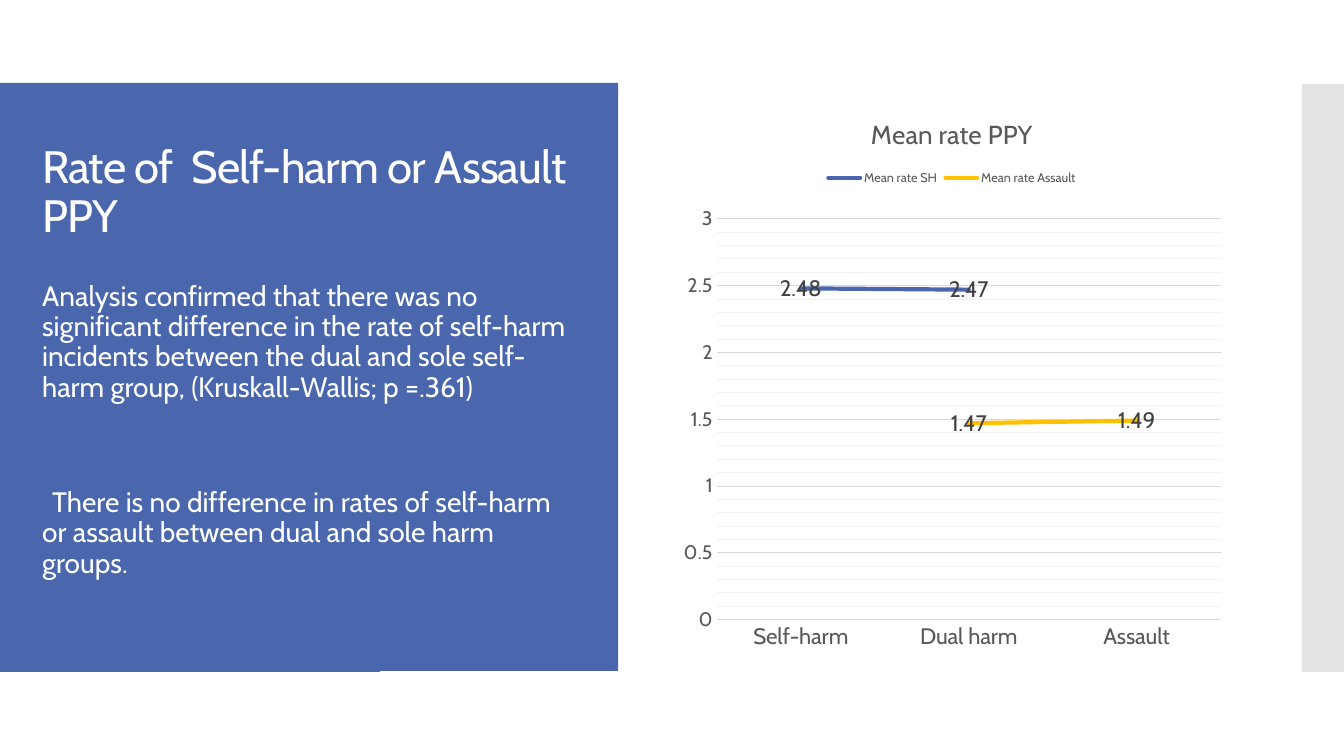
"""Build a slide on self-harm and assault rates with a line chart."""
from copy import deepcopy
from lxml.etree import SubElement
from pptx import Presentation
from pptx.chart.data import CategoryChartData as Data
from pptx.dml.color import RGBColor
from pptx.enum.chart import XL_CHART_TYPE as Kind, XL_LABEL_POSITION as Spot
from pptx.enum.chart import XL_LEGEND_POSITION as Side, XL_TICK_MARK as Tick
from pptx.enum.shapes import MSO_SHAPE as Form
from pptx.enum.text import MSO_ANCHOR as Anchor
from pptx.oxml.ns import qn
from pptx.util import Pt

BLUE = RGBColor(0x4A, 0x66, 0xAC)
GOLD = RGBColor(0xFF, 0xC0, 0x00)
WHITE = RGBColor(0xFF, 0xFF, 0xFF)
PALE = RGBColor(0xE3, 0xE3, 0xE3)
GRID = RGBColor(0xD9, 0xD9, 0xD9)
FINE = RGBColor(0xF2, 0xF2, 0xF2)
GREY = RGBColor(0x59, 0x59, 0x59)
DARK = RGBColor(0x40, 0x40, 0x40)
FONT = "Cabin"

TITLE = "Rate of  Self-harm or Assault PPY"
NOTES = [
    ("Analysis confirmed that there was no significant difference in the rate of "
     "self-harm incidents between the dual and sole self-harm group, "
     "(Kruskall-Wallis; p =.361)", 0, 0),
    ("There is no difference in rates of self-harm or assault between dual and "
     "sole harm groups.", 55, 7.2),
]
GROUPS = ["Self-harm", "Dual harm", "Assault"]
RATES = [
    ("Mean rate SH", (2.48, 2.47, None), BLUE),
    ("Mean rate Assault", (None, 1.47, 1.49), GOLD),
]
PANELS = [
    ((0, 60, 271.5, 420), BLUE),
    ((930, 60, 30, 420), PALE),
    ((0, 59.2, 441.5, 420), BLUE),
]
HEAD = (23, 88.5, 394, 98.5)
BODY = (23, 198, 394, 258)
CHART = (480, 67.7, 400, 403.2)
PLOT = {"x": 0.08, "y": 0.22, "w": 0.9, "h": 0.71}


def place(box):
    return [Pt(n) for n in box]


def style(font, size, color):
    for key, val in {"name": FONT, "size": Pt(size), "bold": False}.items():
        setattr(font, key, val)
    font.color.rgb = color


def rule(line, color, width):
    line.color.rgb = color
    line.width = Pt(width)


def add_text(slide, box, notes, size, anchor):
    frame = slide.shapes.add_textbox(*place(box)).text_frame
    frame.word_wrap = True
    frame.vertical_anchor = anchor
    for i, (text, gap, indent) in enumerate(notes):
        para = frame.add_paragraph() if i else frame.paragraphs[0]
        look = {"line_spacing": 0.9, "space_before": Pt(gap), "space_after": Pt(6)}
        for key, val in look.items():
            setattr(para, key, val)
        para._p.get_or_add_pPr().set("indent", str(int(Pt(indent))))
        run = para.add_run()
        run.text = text
        style(run.font, size, WHITE)
    return frame


def add_rates(slide):
    data = Data()
    data.categories = GROUPS
    for name, vals, _ in RATES:
        data.add_series(name, vals)
    chart = slide.shapes.add_chart(Kind.LINE, *place(CHART), data).chart
    style(chart.font, 10, GREY)
    chart.has_title = True
    frame = chart.chart_title.text_frame
    frame.text = "Mean rate PPY"
    style(frame.paragraphs[0].runs[0].font, 18.6, GREY)
    chart.has_legend = True
    chart.legend.position = Side.TOP
    chart.legend.include_in_layout = False
    style(chart.legend.font, 9, GREY)

    cat, val = chart.category_axis, chart.value_axis
    for axis, size in ((cat, 16), (val, 14)):
        axis.major_tick_mark = axis.minor_tick_mark = Tick.NONE
        style(axis.tick_labels.font, size, GREY)
    rule(cat.format.line, GRID, 0.75)
    val.format.line.fill.background()
    scale = {"minimum_scale": 0, "maximum_scale": 3, "major_unit": 0.5,
             "minor_unit": 0.1, "has_major_gridlines": True,
             "has_minor_gridlines": True}
    for key, num in scale.items():
        setattr(val, key, num)
    rule(val.major_gridlines.format.line, GRID, 0.75)
    major, minor = (val._element.find(qn(f"c:{size}Gridlines"))
                    for size in ("major", "minor"))
    minor.append(deepcopy(major.find(qn("c:spPr"))))
    for paint in minor.iter(qn("a:srgbClr")):
        paint.set("val", str(FINE))

    plot = chart.plots[0]
    plot.vary_by_categories = False
    for line, (_, _, color) in zip(plot.series, RATES):
        line.smooth = False
        rule(line.format.line, color, 3)
        line._element.find(qn("c:spPr")).find(qn("a:ln")).set("cap", "rnd")
        tags = line.data_labels
        tags.show_value = True
        tags.position = Spot.CENTER
        style(tags.font, 16, DARK)

    area = next(chart._chartSpace.iter(qn("c:plotArea")))
    for old in area.findall(qn("c:layout")):
        area.remove(old)
    shell = SubElement(area, qn("c:layout"))
    area.insert(0, shell)
    inner = SubElement(shell, qn("c:manualLayout"))
    parts = {"layoutTarget": "inner", "xMode": "edge", "yMode": "edge", **PLOT}
    for key, num in parts.items():
        SubElement(inner, qn("c:" + key)).set("val", str(num))


def main():
    deck = Presentation()
    deck.slide_width, deck.slide_height = Pt(960), Pt(540)
    slide = deck.slides.add_slide(deck.slide_layouts[6])
    for box, color in PANELS:
        panel = slide.shapes.add_shape(Form.RECTANGLE, *place(box))
        panel.shadow.inherit = False
        panel.fill.solid()
        panel.fill.fore_color.rgb = color
        panel.line.fill.background()
    head = add_text(slide, HEAD, [(TITLE, 0, 0)], 32.4, Anchor.MIDDLE)
    head.paragraphs[0].space_after = Pt(0)
    head.paragraphs[0].runs[0]._r.get_or_add_rPr().set("spc", "-60")
    add_text(slide, BODY, NOTES, 20, Anchor.TOP)
    add_rates(slide)
    deck.save("out.pptx")


if __name__ == "__main__":
    main()
